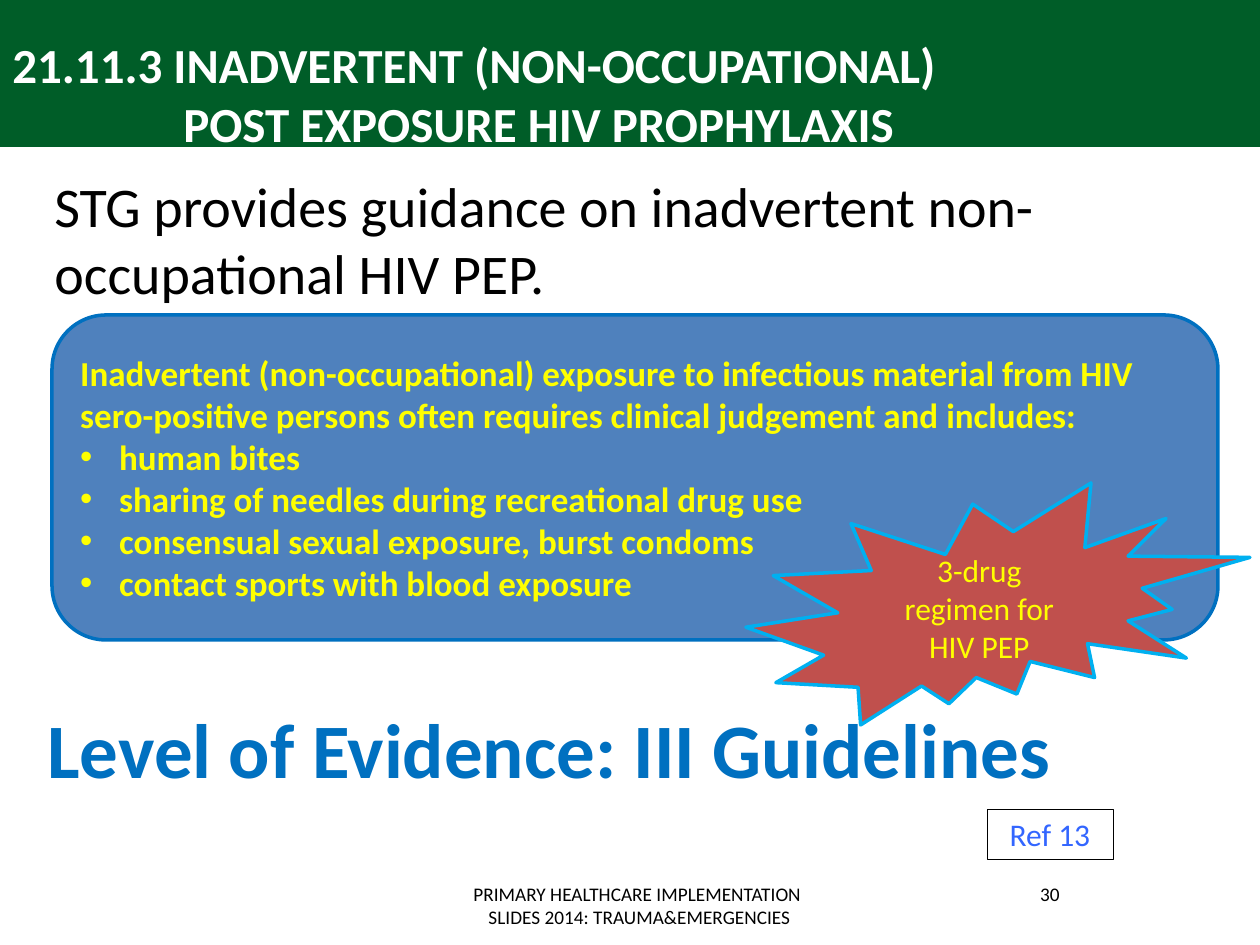
import pptx
import pptx.util
import pptx.dml.color
import pptx.enum.shapes
import pptx.enum.text
import lxml.etree

PX = 914400 / 126
SHAPE = pptx.enum.shapes.MSO_SHAPE
ALIGN = pptx.enum.text.PP_ALIGN
ANCHOR = pptx.enum.text.MSO_ANCHOR
THEME = {
    "font": "Calibri",
    "band": "005D28", "panel": "4F81BD", "panel_line": "0070C0",
    "burst": "C0504D", "burst_line": "00B0F0", "ref_line": "000000",
    "title": {"size": 28, "bold": True, "color": "FFFFFF"},
    "body": {"size": 32, "bold": False, "color": "000000"},
    "evidence": {"size": 44, "bold": True, "color": "0070C0"},
    "list": {"size": 20, "bold": True, "color": "FFFF00"},
    "callout": {"size": 18, "bold": False, "color": "FFFF00"},
    "ref": {"size": 18, "bold": False, "color": "3366FF"},
    "footer": {"size": 11, "bold": False, "color": "000000"},
}


def px(n):
    return pptx.util.Emu(round(n * PX))


def write(sp, lines, align=ALIGN.LEFT, anchor=ANCHOR.TOP):
    tf = sp.text_frame
    for name, value in {"word_wrap": True, "vertical_anchor": anchor}.items():
        setattr(tf, name, value)
    for i, (text, style, margin, indent, before) in enumerate(lines):
        p = tf.add_paragraph() if i else tf.paragraphs[0]
        p.alignment = align
        p.space_before = pptx.util.Pt(before)
        pPr = p._p.get_or_add_pPr()
        pPr.set("marL", str(px(margin)))
        pPr.set("indent", str(px(indent)))
        if indent < 0:
            ns = "{http://schemas.openxmlformats.org/drawingml/2006/main}"
            lxml.etree.SubElement(pPr, ns + "buFont").set("typeface", "Arial")
            lxml.etree.SubElement(pPr, ns + "buChar").set("char", "•")
        r = p.add_run()
        r.text = text
        fmt = THEME[style]
        for name, value in {"name": THEME["font"], "size": pptx.util.Pt(fmt["size"]),
                            "bold": fmt["bold"]}.items():
            setattr(r.font, name, value)
        r.font.color.rgb = pptx.dml.color.RGBColor.from_string(fmt["color"])


prs = pptx.Presentation()
for name, value in {"slide_width": px(1260), "slide_height": px(945)}.items():
    setattr(prs, name, value)
shapes = prs.slides.add_slide(prs.slide_layouts[6]).shapes

band = shapes.add_shape(SHAPE.RECTANGLE, px(0), px(0), px(1260), px(147))
band.shadow.inherit = False
band.fill.solid()
band.fill.fore_color.rgb = pptx.dml.color.RGBColor.from_string(THEME["band"])
band.line.fill.background()

texts = [
    ((35, 165, 1134, 624), ALIGN.LEFT, [
        ("STG provides guidance on inadvertent non-occupational HIV PEP.", "body", 7, 0, 0),
        ("Level of Evidence: III Guidelines", "evidence", 0, 0, 226)]),
    ((903, 876, 294, 50), ALIGN.CENTER, [("30", "footer", 0, 0, 0)]),
    ((0, 28, 1134, 158), ALIGN.LEFT, [
        ("21.11.3 INADVERTENT (NON-OCCUPATIONAL)", "title", 0, 0, 0),
        ("POST EXPOSURE HIV PROPHYLAXIS", "title", 171, 0, 0)]),
    ((403, 876, 473, 50), ALIGN.CENTER, [
        ("PRIMARY HEALTHCARE IMPLEMENTATION ", "footer", 0, 0, 0),
        ("SLIDES 2014: TRAUMA&EMERGENCIES", "footer", 0, 0, 0)]),
]
for box, align, lines in texts:
    write(shapes.add_textbox(*map(px, box)), lines, align)

exposures = [
    "human bites",
    "sharing of needles during recreational drug use",
    "consensual sexual exposure, burst condoms",
    "contact sports with blood exposure",
]
panel_lines = [("Inadvertent (non-occupational) exposure to infectious material from HIV "
                "sero-positive persons often requires clinical judgement and includes:",
                "list", 0, 0, 0)]
panel_lines += [(text, "list", 39, -39, 0) for text in exposures]

panels = [
    (SHAPE.ROUNDED_RECTANGLE, (52, 315, 1166, 325), "panel", "panel_line", 2,
     ALIGN.LEFT, panel_lines),
    (SHAPE.EXPLOSION2, (746, 483, 504, 242), "burst", "burst_line", 2,
     ALIGN.CENTER, [("3-drug regimen for HIV PEP", "callout", 0, 0, 0)]),
    (SHAPE.RECTANGLE, (987, 809, 126, 50), None, "ref_line", 0.25,
     ALIGN.CENTER, [("Ref 13", "ref", 0, 0, 0)]),
]
for kind, box, fill, line, width, align, lines in panels:
    sp = shapes.add_shape(kind, *map(px, box))
    sp.shadow.inherit = False
    if fill:
        sp.fill.solid()
        sp.fill.fore_color.rgb = pptx.dml.color.RGBColor.from_string(THEME[fill])
    else:
        sp.fill.background()
    sp.line.color.rgb = pptx.dml.color.RGBColor.from_string(THEME[line])
    sp.line.width = pptx.util.Pt(width)
    write(sp, lines, align, ANCHOR.MIDDLE)

prs.save("out.pptx")
